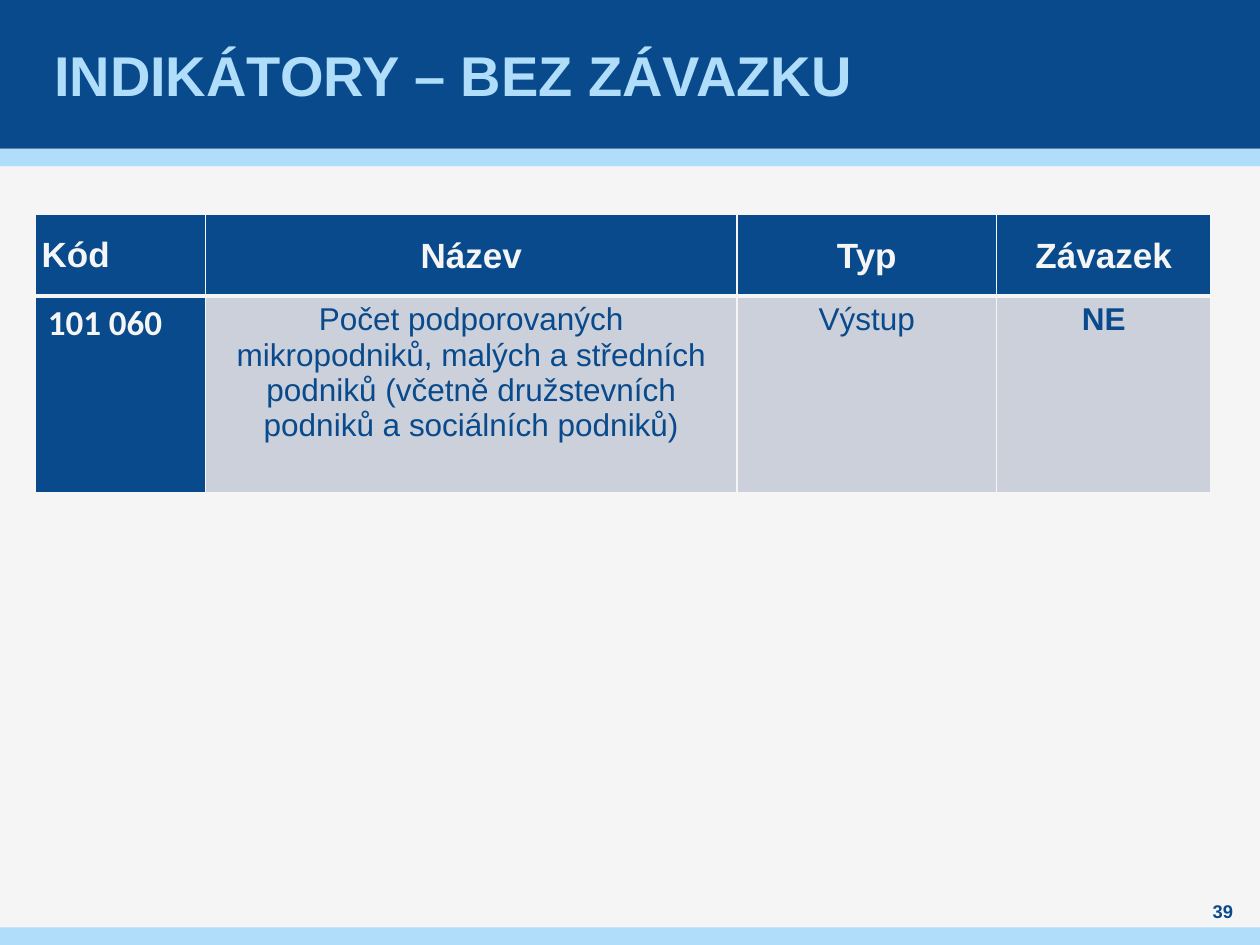
from dataclasses import dataclass

import pptx
import pptx.dml.color
import pptx.enum.shapes
import pptx.enum.text
import pptx.oxml
import pptx.oxml.ns
import pptx.util

Pt = pptx.util.Pt
ALIGN = pptx.enum.text.PP_ALIGN
MIDDLE = pptx.enum.text.MSO_ANCHOR.MIDDLE
TOP = pptx.enum.text.MSO_ANCHOR.TOP

COLORS = {"paper": "F5F5F5", "navy": "084A8B", "sky": "AFDDFA", "grey": "CCD0DA"}
SLIDE_WIDTH, SLIDE_HEIGHT = 720, 540
HEADER_HEIGHT, STRIPE_HEIGHT = 85, 10
COLUMN_WIDTHS = (97.2, 303.84, 148.32, 122.4)
ROW_HEIGHTS = (46.8, 112.32)


@dataclass
class Band:
    top: float
    height: float
    color: str


@dataclass
class TextStyle:
    size: float
    color: str
    bold: bool = True
    font: str = "Arial"
    align: ALIGN = ALIGN.CENTER
    line_spacing: float = 1.0
    before: float = 0
    after: float = 0


@dataclass
class Entry:
    text: str
    style: TextStyle
    fill: str


def rgb(name: str) -> pptx.dml.color.RGBColor:
    return pptx.dml.color.RGBColor.from_string(COLORS[name])


def write(frame, text: str, style: TextStyle) -> None:
    paragraph = frame.paragraphs[0]
    paragraph.text = text
    paragraph.alignment = style.align
    paragraph.line_spacing = style.line_spacing
    paragraph.space_before = Pt(style.before)
    paragraph.space_after = Pt(style.after)
    paragraph.font.name = style.font
    paragraph.font.size = Pt(style.size)
    paragraph.font.bold = style.bold
    paragraph.font.color.rgb = rgb(style.color)


def draw_band(slide, band: Band) -> None:
    bar = slide.shapes.add_shape(
        pptx.enum.shapes.MSO_SHAPE.RECTANGLE,
        Pt(0), Pt(band.top), Pt(SLIDE_WIDTH), Pt(band.height),
    )
    bar.shadow.inherit = False
    bar.fill.solid()
    bar.fill.fore_color.rgb = rgb(band.color)
    bar.line.fill.background()


def draw_label(slide, text: str, left: float, top: float, width: float, height: float,
               side_inset: float, style: TextStyle) -> None:
    frame = slide.shapes.add_textbox(Pt(left), Pt(top), Pt(width), Pt(height)).text_frame
    frame.word_wrap = True
    frame.vertical_anchor = MIDDLE
    frame.margin_left = frame.margin_right = Pt(side_inset)
    frame.margin_top = frame.margin_bottom = Pt(0)
    write(frame, text, style)


def set_borders(cell, widths: dict[str, float]) -> None:
    """Put the border lines ahead of the cell fill, as the schema requires."""
    properties = cell._tc.get_or_add_tcPr()
    for position, (side, width) in enumerate(widths.items()):
        border = pptx.oxml.parse_xml(
            f'<a:ln{side} {pptx.oxml.ns.nsdecls("a")} w="{Pt(width)}"><a:solidFill>'
            f'<a:srgbClr val="{COLORS["paper"]}"/></a:solidFill></a:ln{side}>'
        )
        properties.insert(position, border)


def draw_indicators(slide, rows: list[list[Entry]]) -> None:
    table = slide.shapes.add_table(
        len(rows), len(COLUMN_WIDTHS), Pt(20.16), Pt(122.4),
        Pt(sum(COLUMN_WIDTHS)), Pt(sum(ROW_HEIGHTS)),
    ).table
    for column, width in zip(table.columns, COLUMN_WIDTHS):
        column.width = Pt(width)
    for row, height in zip(table.rows, ROW_HEIGHTS):
        row.height = Pt(height)
    for row_index, entries in enumerate(rows):
        is_header = row_index == 0
        for column_index, entry in enumerate(entries):
            cell = table.cell(row_index, column_index)
            cell.fill.solid()
            cell.fill.fore_color.rgb = rgb(entry.fill)
            cell.vertical_anchor = MIDDLE if is_header else TOP
            cell.margin_left = cell.margin_right = Pt(3.6 if is_header else 7.2)
            cell.margin_top = cell.margin_bottom = Pt(3.6)
            write(cell.text_frame, entry.text, entry.style)
            set_borders(cell, {"L": 1, "R": 1, "T": 1 if is_header else 3,
                               "B": 3 if is_header else 1})


def main() -> None:
    presentation = pptx.Presentation()
    presentation.slide_width = Pt(SLIDE_WIDTH)
    presentation.slide_height = Pt(SLIDE_HEIGHT)
    slide = presentation.slides.add_slide(presentation.slide_layouts[6])
    slide.background.fill.solid()
    slide.background.fill.fore_color.rgb = rgb("paper")

    for band in (
        Band(HEADER_HEIGHT, STRIPE_HEIGHT, "sky"),
        Band(0, HEADER_HEIGHT, "navy"),
        Band(SLIDE_HEIGHT - STRIPE_HEIGHT, STRIPE_HEIGHT, "sky"),
    ):
        draw_band(slide, band)

    draw_label(slide, "INDIKÁTORY – BEZ ZÁVAZKU", 28, 0, 663, HEADER_HEIGHT, 2.88,
               TextStyle(32, "sky", align=ALIGN.LEFT))
    draw_label(slide, "39", 680.4, 513.4, 36.7, 14.4, 0, TextStyle(10.5, "navy"))

    code_heading = TextStyle(20, "paper", align=ALIGN.LEFT, after=8)
    heading = TextStyle(20, "paper", line_spacing=1.07, after=8)
    code = TextStyle(20, "paper", font="Calibri", align=ALIGN.LEFT, before=3, after=3)
    detail = TextStyle(18, "navy", bold=False)
    commitment = TextStyle(18, "navy")
    indicator_name = ("Počet podporovaných mikropodniků, malých a středních podniků "
                      "(včetně družstevních podniků a sociálních podniků)")
    draw_indicators(slide, [
        [Entry("Kód", code_heading, "navy")]
        + [Entry(text, heading, "navy") for text in ("Název", "Typ", "Závazek")],
        [
            Entry("101 060", code, "navy"),
            Entry(indicator_name, detail, "grey"),
            Entry("Výstup", detail, "grey"),
            Entry("NE", commitment, "grey"),
        ],
    ])
    presentation.save("out.pptx")


if __name__ == "__main__":
    main()
